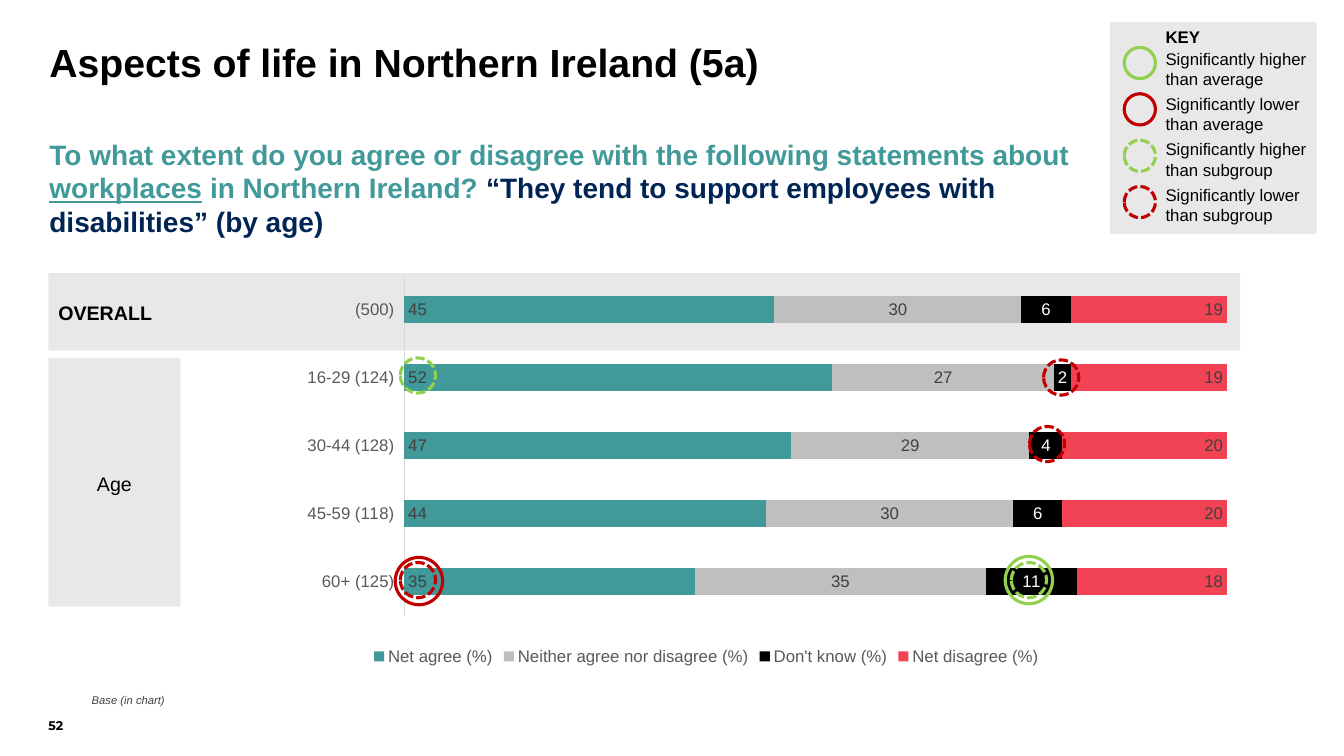
from dataclasses import dataclass

from lxml.etree import SubElement
from pptx import Presentation
from pptx.chart.data import CategoryChartData
from pptx.dml.color import RGBColor
from pptx.enum.chart import (XL_CHART_TYPE, XL_LABEL_POSITION, XL_LEGEND_POSITION,
                             XL_TICK_LABEL_POSITION, XL_TICK_MARK)
from pptx.enum.dml import MSO_LINE
from pptx.enum.shapes import MSO_SHAPE
from pptx.enum.text import MSO_ANCHOR, PP_ALIGN
from pptx.oxml.ns import qn
from pptx.util import Pt

PX = 9144  # EMU per px, 100 px to the inch


@dataclass(frozen=True)
class Theme:
    font: str = "Arial"
    number_font: str = "Montserrat"
    black: str = "000000"
    white: str = "FFFFFF"
    teal: str = "419999"
    navy: str = "002554"
    panel: str = "E8E8E8"
    neutral: str = "BFBFBF"
    coral: str = "F14354"
    higher: str = "92D050"
    lower: str = "C00000"
    axis_text: str = "595959"
    axis_line: str = "D9D9D9"
    dark_text: str = "404040"
    title: int = 28
    question: int = 20
    heading: int = 14
    body: int = 12
    chart: int = 10
    number: int = 9
    note: int = 8


def rgb(color):
    return RGBColor.from_string(color)


def style_font(font, name, size, color, bold=False, italic=False, underline=False):
    font.name, font.size = name, Pt(size)
    font.color.rgb = rgb(color)
    font.bold, font.italic, font.underline = bold, italic, underline


class SlideBuilder:
    def __init__(self, slide, theme):
        self.shapes = slide.shapes
        self.theme = theme

    def fill_text(self, tf, text, size, color=None, font=None, align=PP_ALIGN.LEFT,
                  spacing=1.0, **style):
        """Fill a frame with a string, or with (string, run format) pairs."""
        p = tf.paragraphs[0]
        p.alignment, p.line_spacing = align, spacing
        for part, own in [(text, {})] if isinstance(text, str) else text:
            r = p.add_run()
            r.text = part
            run_style = {"color": color or self.theme.black, **style, **own}
            style_font(r.font, font or self.theme.font, size, **run_style)

    def text(self, box, text, size, anchor=MSO_ANCHOR.TOP, wrap=True, **style):
        tf = self.shapes.add_textbox(*(v * PX for v in box)).text_frame
        tf.margin_left = tf.margin_right = tf.margin_top = tf.margin_bottom = 0
        tf.word_wrap, tf.vertical_anchor = wrap, anchor
        self.fill_text(tf, text, size, **style)

    def shape(self, kind, box):
        sp = self.shapes.add_shape(kind, *(v * PX for v in box))
        sp.shadow.inherit = False
        return sp

    def panel(self, box, text="", **style):
        sp = self.shape(MSO_SHAPE.RECTANGLE, box)
        sp.fill.solid()
        sp.fill.fore_color.rgb = rgb(self.theme.panel)
        sp.line.fill.background()
        if text:
            sp.text_frame.vertical_anchor = MSO_ANCHOR.MIDDLE
            self.fill_text(sp.text_frame, text, self.theme.heading, spacing=1.1, **style)

    def ring(self, x, y, size, color, dashed):
        sp = self.shape(MSO_SHAPE.OVAL, (x, y, size, size))
        sp.fill.background()
        sp.line.color.rgb = rgb(color)
        sp.line.width = Pt(2.25)
        if dashed:
            sp.line.dash_style = MSO_LINE.SQUARE_DOT

    def stacked_bars(self, box, categories, series, plot_area):
        """Draw 100% bars; series holds (name, values, fill, label colour, label place)."""
        t = self.theme
        data = CategoryChartData(number_format="0")
        data.categories = categories
        for name, values, *_ in series:
            data.add_series(name, values)
        chart = self.shapes.add_chart(XL_CHART_TYPE.BAR_STACKED_100,
                                      *(v * PX for v in box), data).chart
        style_font(chart.font, t.font, t.chart, t.black)
        chart.has_title = False
        chart.has_legend = True
        chart.legend.position = XL_LEGEND_POSITION.BOTTOM
        chart.legend.include_in_layout = False
        style_font(chart.legend.font, t.font, t.body, t.axis_text)

        axis = chart.category_axis
        axis.major_tick_mark = axis.minor_tick_mark = XL_TICK_MARK.NONE
        axis.tick_label_position = XL_TICK_LABEL_POSITION.LOW
        style_font(axis.tick_labels.font, t.font, t.body, t.axis_text)
        axis.format.line.color.rgb = rgb(t.axis_line)
        axis.format.line.width = Pt(0.75)
        chart.value_axis.has_major_gridlines = False
        chart.value_axis.visible = False

        plot = chart.plots[0]
        plot.gap_width, plot.overlap = 150, 100
        plot.vary_by_categories = False
        for s, (_, _, fill, label_color, place) in zip(plot.series, series):
            s.format.fill.solid()
            s.format.fill.fore_color.rgb = rgb(fill)
            labels = s.data_labels
            labels.show_value = True
            labels.number_format, labels.number_format_is_linked = "0", False
            labels.position = place
            style_font(labels.font, t.font, t.body, label_color)
        self.place_plot(chart, plot_area)

    def place_plot(self, chart, plot_area):
        """Fix the inner plot area as fractions of the chart: x, y, w, h."""
        area = chart.element.find(".//" + qn("c:plotArea"))
        for old in area.findall(qn("c:layout")):
            area.remove(old)
        layout = SubElement(area, qn("c:layout"))
        area.insert(0, layout)
        manual = SubElement(layout, qn("c:manualLayout"))
        settings = [("layoutTarget", "inner"), ("xMode", "edge"), ("yMode", "edge"),
                    *zip("xywh", plot_area)]
        for tag, value in settings:
            SubElement(manual, qn(f"c:{tag}")).set("val", str(value))


def main():
    prs = Presentation()
    prs.slide_width, prs.slide_height = 1333 * PX, 750 * PX
    t = Theme()
    s = SlideBuilder(prs.slides.add_slide(prs.slide_layouts[6]), t)

    s.text((49, 43, 1022, 85), "Aspects of life in Northern Ireland (5a)", t.title,
           bold=True, spacing=0.9)
    question = [
        ("To what extent do you agree or disagree with the following statements about ", {}),
        ("workplaces", {"underline": True}),
        (" in Northern Ireland? ", {}),
        ("“They tend to support employees with disabilities” (by age)", {"color": t.navy}),
    ]
    s.text((49, 136, 1057, 101), question, t.question, color=t.teal, bold=True)

    s.panel((1101, 22, 205, 210))
    s.text((1156, 25, 45, 20), "KEY", t.body, bold=True, spacing=1.1)
    key = [("higher", "average", t.higher, False), ("lower", "average", t.lower, False),
           ("higher", "subgroup", t.higher, True), ("lower", "subgroup", t.lower, True)]
    for i, (direction, group, color, dashed) in enumerate(key):
        s.ring(1115, 47 + 46 * i, 31, color, dashed)
        s.text((1156, 48 + 45 * i, 141, 40),
               f"Significantly {direction} than {group}", t.body)

    s.panel((48, 271, 1182, 77), "OVERALL", bold=True)
    s.panel((48, 355, 131, 247), "Age", align=PP_ALIGN.CENTER)

    categories = ["60+ (125)", "45-59 (118)", "30-44 (128)", "16-29 (124)", "(500)"]
    place = XL_LABEL_POSITION
    series = [
        ("Net agree (%)", (35, 44, 47, 52, 45), t.teal, t.dark_text, place.INSIDE_BASE),
        ("Neither agree nor disagree (%)", (35, 30, 29, 27, 30), t.neutral, t.dark_text,
         place.CENTER),
        ("Don't know (%)", (11, 6, 4, 2, 6), t.black, t.white, place.CENTER),
        ("Net disagree (%)", (18, 20, 20, 19, 19), t.coral, t.dark_text, place.INSIDE_END),
    ]
    s.stacked_bars((184, 257, 1033, 407), categories, series,
                   plot_area=(0.21, 0.04, 0.79, 0.83))

    significant = [
        (397, 355, 35, t.higher, True), (1035, 357, 35, t.lower, True),
        (1021, 423, 35, t.lower, True),
        (397, 558, 35, t.lower, True), (392, 553, 47, t.lower, False),
        (1003, 558, 35, t.higher, True), (997, 552, 47, t.higher, False),
    ]
    for mark in significant:
        s.ring(*mark)

    s.text((91, 687, 1233, 14), "Base (in chart)", t.note, color=t.dark_text,
           italic=True, spacing=1.1, anchor=MSO_ANCHOR.BOTTOM)
    s.text((48, 687, 33, 40), "52", t.number, font=t.number_font, bold=True,
           anchor=MSO_ANCHOR.BOTTOM, wrap=False)
    prs.save("out.pptx")


if __name__ == "__main__":
    main()
